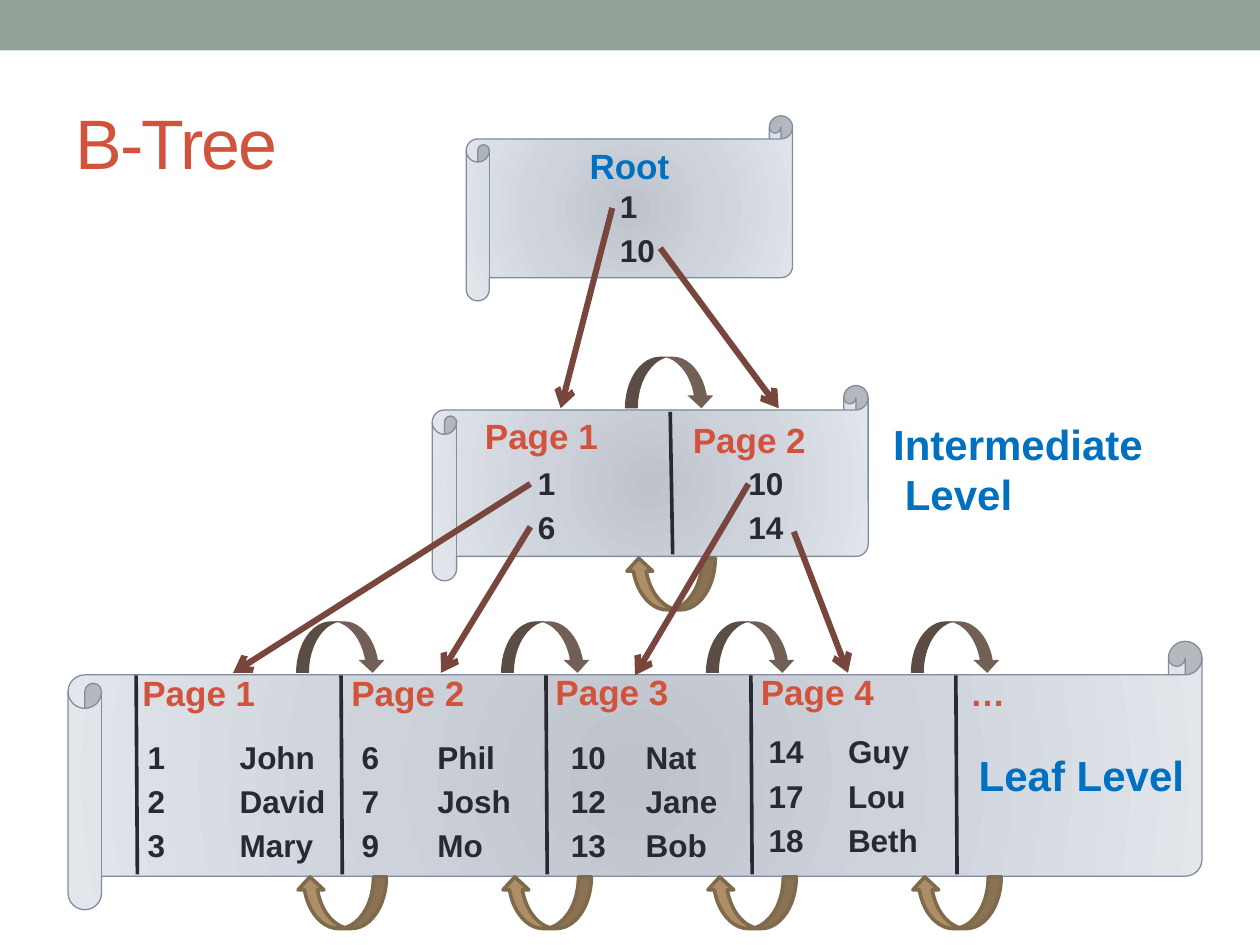
from lxml import etree
from pptx import Presentation
from pptx.dml.color import RGBColor
from pptx.enum.shapes import MSO_CONNECTOR, MSO_SHAPE
from pptx.enum.text import MSO_ANCHOR
from pptx.oxml import parse_xml
from pptx.oxml.ns import qn
from pptx.util import Pt

STRAIGHT = MSO_CONNECTOR.STRAIGHT
RECTANGLE = MSO_SHAPE.RECTANGLE
SCROLL = MSO_SHAPE.HORIZONTAL_SCROLL
CURVED_ARROW = MSO_SHAPE.CURVED_DOWN_ARROW
MIDDLE = MSO_ANCHOR.MIDDLE

FONT = "Arial"
RED, BLUE, INK, BROWN = "D2533C", "0070C0", "292934", "79463D"
NO_GRID_STYLE = "{2D5ABB26-0587-4C30-8999-92F81FD0307C}"
ROW_HEIGHT = 25.4
PAGE_STEP = 117.1
SCROLL_STOPS = [(0, "BEC3CB"), (45, "CDD2DB"), (100, "E3E6EB")]

# label, label x, label y, table x, table y, column width, rows
LEAF_PAGES = [
    ("Page 1", 35.3, 13.7, 45.4, 54, 52.7, [("1", "John"), ("2", "David"), ("3", "Mary")]),
    ("Page 2", 154.8, 13.7, 167.8, 54, 43.2, [("6", "Phil"), ("7", "Josh"), ("9", "Mo")]),
    ("Page 3", 271.4, 13, 287.3, 54, 42.7, [("10", "Nat"), ("12", "Jane"), ("13", "Bob")]),
    ("Page 4", 388.8, 13, 400.3, 51.1, 45.4, [("14", "Guy"), ("17", "Lou"), ("18", "Beth")]),
]
INDEX_PAGES = [
    ("Page 1", 23, 13, 60.4, 43.9, 52.7, [("1",), ("6",)]),
    ("Page 2", 141.8, 15.1, 180.7, 43.9, 43.2, [("10",), ("14",)]),
]
# start x, start y, end x, end y
POINTERS = [
    (377.3, 141.8, 445, 233.3), (349.9, 118.8, 320.4, 233.3),
    (303.1, 276.5, 133.2, 384.5), (303.1, 301, 252, 384.5),
    (427.7, 276.5, 362.9, 385.9), (453.6, 303.8, 484.6, 384.5),
]


def color(value):
    return RGBColor.from_string(value)


def style_font(paragraph, size, value, bold=True):
    font = paragraph.font
    font.name, font.size, font.bold = FONT, Pt(size), bold
    font.color.rgb = color(value)


def add_shape(slide, kind, x, y, w, h, fill=None, line=None, line_width=0.75):
    shape = slide.shapes.add_shape(kind, Pt(x), Pt(y), Pt(w), Pt(h))
    shape.shadow.inherit = False
    if fill:
        shape.fill.solid()
        shape.fill.fore_color.rgb = color(fill)
    if line:
        shape.line.color.rgb = color(line)
        shape.line.width = Pt(line_width)
    else:
        shape.line.fill.background()
    return shape


def add_text(slide, text, x, y, w, h, size, value, wrap=True, bold=True):
    box = slide.shapes.add_textbox(Pt(x), Pt(y), Pt(w), Pt(h))
    frame = box.text_frame
    frame.word_wrap = wrap
    frame.text = text
    for paragraph in frame.paragraphs:
        style_font(paragraph, size, value, bold)
    return box


def add_line(slide, x1, y1, x2, y2, value, width, arrow=False):
    line = slide.shapes.add_connector(STRAIGHT, Pt(x1), Pt(y1), Pt(x2), Pt(y2))
    line.line.color.rgb = color(value)
    line.line.width = Pt(width)
    if arrow:
        etree.SubElement(line.line._get_or_add_ln(), qn("a:tailEnd"), type="arrow")
    etree.SubElement(line._element.spPr, qn("a:effectLst"))


def add_scroll(slide, x, y, w, h):
    """Scroll with a gradient that spreads from its centre."""
    scroll = add_shape(slide, SCROLL, x, y, w, h, line="808DA0")
    stops = "".join(f'<a:gs pos="{pos * 1000}"><a:srgbClr val="{value}"/></a:gs>'
                    for pos, value in SCROLL_STOPS)
    gradient = parse_xml(
        '<a:gradFill xmlns:a="http://schemas.openxmlformats.org/drawingml/2006/main" '
        f'rotWithShape="1"><a:gsLst>{stops}</a:gsLst><a:path path="circle">'
        '<a:fillToRect l="100000" t="100000" r="100000" b="100000"/></a:path></a:gradFill>')
    scroll._element.spPr.find(qn("a:prstGeom")).addnext(gradient)


def add_entries(slide, x, y, column_width, rows):
    columns = len(rows[0])
    frame = slide.shapes.add_table(len(rows), columns, Pt(x), Pt(y),
                                   Pt(column_width * columns), Pt(ROW_HEIGHT * len(rows)))
    table = frame.table
    table.first_row = table.horz_banding = False
    table._tbl.tblPr.find(qn("a:tableStyleId")).text = NO_GRID_STYLE
    for r, row in enumerate(rows):
        for c, entry in enumerate(row):
            cell = table.cell(r, c)
            cell.fill.background()
            cell.vertical_anchor = MIDDLE
            cell.margin_left = cell.margin_right = 0
            cell.margin_top = cell.margin_bottom = 0
            cell.text = entry
            style_font(cell.text_frame.paragraphs[0], 18, INK)


def add_page(slide, x, y, page):
    label, label_x, label_y, table_x, table_y, column_width, rows = page
    add_text(slide, label, x + label_x, y + label_y, 79.9, 31.7, 20, RED, wrap=False)
    add_entries(slide, x + table_x, y + table_y, column_width, rows)


def add_sibling_links(slide, x, top, bottom):
    """Next-page arrow above and previous-page arrow below."""
    add_shape(slide, CURVED_ARROW, x, top, 51.1, 29.5, "726056")
    back = add_shape(slide, CURVED_ARROW, x + 0.5, bottom, 51.1, 29.5,
                     "AD8F67", "806A4C", 2.08)
    back.rotation = 180


def add_header(slide, x, y, w, h):
    add_shape(slide, RECTANGLE, x, y, w, h, "93A299")
    title = add_text(slide, "B-Tree", x + 36, y + 41.8, 648, 77.8, 40, RED, bold=False)
    title.text_frame.vertical_anchor = MIDDLE
    title.text_frame.paragraphs[0].runs[0].font._element.set("spc", "-100")


def add_root(slide, x, y, w, h):
    add_scroll(slide, x, y, w, h)
    add_text(slide, "Root", x + 63.4, y + 13, 60.5, 31.7, 20, BLUE, wrap=False)
    add_entries(slide, x + 87.8, y + 39.6, 32.4, [("1",), ("10",)])


def add_intermediate_level(slide, x, y, w, h):
    add_scroll(slide, x, y, w, h)
    add_line(slide, x + 136, y + 15.1, x + 137.4, y + 96.5, INK, 2.08)
    for page in INDEX_PAGES:
        add_page(slide, x, y, page)
    add_sibling_links(slide, x + 110.1, y - 16.5, y + 98.7)
    add_text(slide, "Intermediate\n Level", x + w + 7.2, y + 15.1, 157.7, 65.5, 24, BLUE)


def add_leaf_level(slide, x, y, w, h):
    add_scroll(slide, x, y, w, h)
    for i in range(len(LEAF_PAGES) + 1):
        divider = x + 38.9 + i * PAGE_STEP
        add_line(slide, divider, y + 19.4, divider + 0.7, y + 133.2, INK, 2.08)
    for i, page in enumerate(LEAF_PAGES):
        add_page(slide, x, y, page)
        add_sibling_links(slide, x + 130.3 + i * PAGE_STEP, y - 11.5, y + 134.6)
    add_text(slide, "…", x + 508.3, y + 13.7, 34.6, 31.7, 20, RED, wrap=False)
    add_text(slide, "Leaf Level", x + 513.3, y + 58.3, 133.2, 36, 24, BLUE)


def main():
    prs = Presentation()
    prs.slide_width, prs.slide_height = Pt(720), Pt(540)
    slide = prs.slides.add_slide(prs.slide_layouts[6])
    add_header(slide, 0, 0, 720, 28.8)
    add_leaf_level(slide, 38.9, 366.5, 648, 153.4)
    add_root(slide, 266.4, 66.2, 186.5, 105.8)
    add_intermediate_level(slide, 247, 220.3, 249.1, 111.6)
    # Pointers from each key to its page
    for pointer in POINTERS:
        add_line(slide, *pointer, BROWN, 3.5, arrow=True)
    prs.save("out.pptx")


if __name__ == "__main__":
    main()
